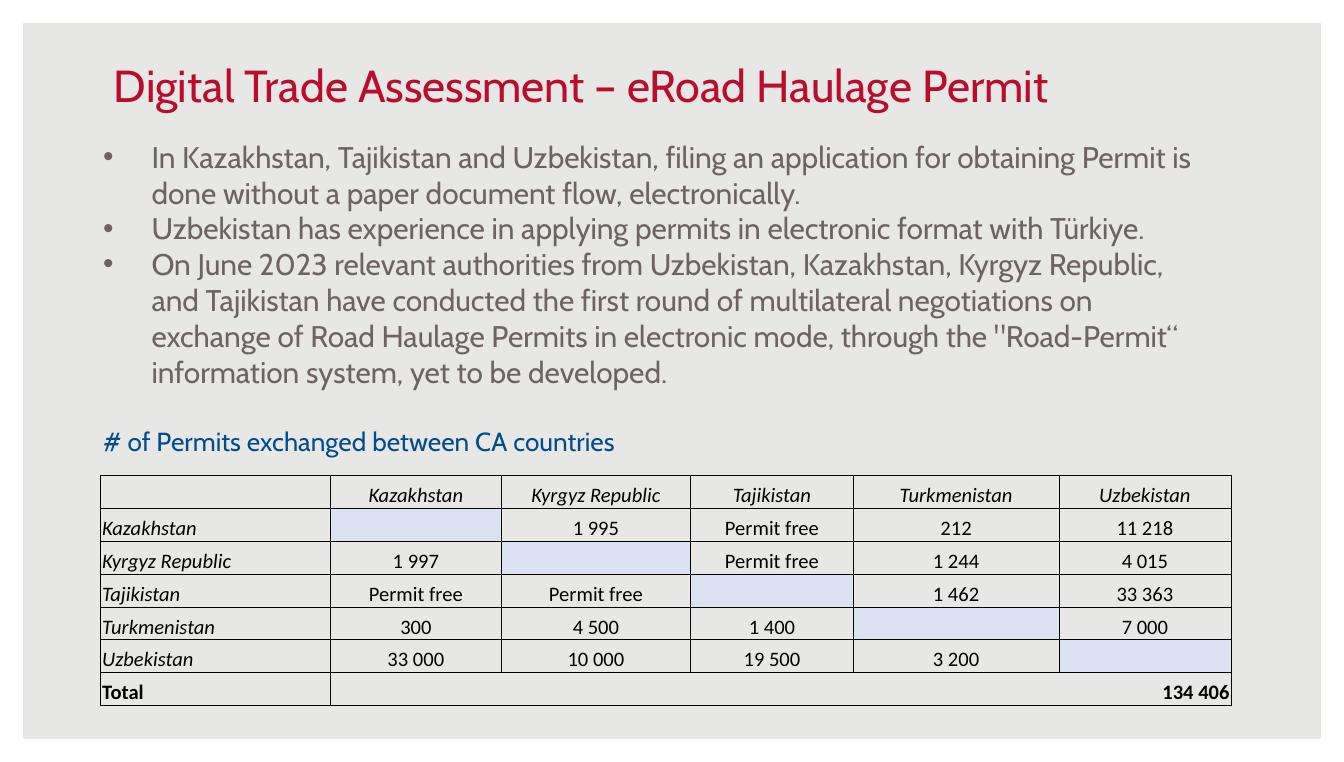
import pptx
import pptx.dml.color
import pptx.enum.shapes
import pptx.enum.text
import pptx.oxml
import pptx.oxml.ns
import pptx.util
from pptx.dml.color import RGBColor
from pptx.util import Inches

BACKGROUND = RGBColor(0xE7, 0xE7, 0xE5)
WHITE = RGBColor(0xFF, 0xFF, 0xFF)
BLACK = RGBColor(0x00, 0x00, 0x00)
RED = RGBColor(0xBA, 0x0C, 0x2F)
GREY = RGBColor(0x6C, 0x64, 0x63)
BLUE = RGBColor(0x00, 0x4D, 0x8B)
PALE_BLUE = RGBColor(0xD9, 0xE1, 0xF2)

TITLE = "Digital Trade Assessment – eRoad Haulage Permit"
BULLETS = [
    "In Kazakhstan, Tajikistan and Uzbekistan, filing an application for obtaining "
    "Permit is done without a paper document flow, electronically.",
    "Uzbekistan has experience in applying permits in electronic format with Türkiye.",
    "On June 2023 relevant authorities from Uzbekistan, Kazakhstan, Kyrgyz Republic, "
    "and Tajikistan have conducted the first round of multilateral negotiations on "
    "exchange of Road Haulage Permits in electronic mode, through the \"Road-Permit“ "
    "information system, yet to be developed.",
]
CAPTION = "# of Permits exchanged between CA countries"
COUNTRIES = ["Kazakhstan", "Kyrgyz Republic", "Tajikistan", "Turkmenistan", "Uzbekistan"]
PERMITS = [
    ["", "1 995", "Permit free", "212", "11 218"],
    ["1 997", "", "Permit free", "1 244", "4 015"],
    ["Permit free", "Permit free", "", "1 462", "33 363"],
    ["300", "4 500", "1 400", "", "7 000"],
    ["33 000", "10 000", "19 500", "3 200", ""],
]
TOTAL = "134 406"
COLUMN_WIDTHS = [1.71, 1.27, 1.41, 1.21, 1.53, 1.28]


def style_font(font, name, size, color):
    """Set the typeface, size and colour of a font."""
    font.name = name
    font.size = pptx.util.Pt(size)
    font.color.rgb = color


def add_frame(slide, left, top, width, height):
    """Draw the white border around the slide."""
    frame = slide.shapes.add_shape(
        pptx.enum.shapes.MSO_SHAPE.FRAME,
        Inches(left), Inches(top), Inches(width), Inches(height))
    frame.adjustments[0] = 0.03
    frame.shadow.inherit = False
    frame.fill.solid()
    frame.fill.fore_color.rgb = WHITE
    frame.line.fill.background()


def add_text_frame(slide, left, top, width, height):
    """Add a wrapping text box with equal insets and return its text frame."""
    box = slide.shapes.add_textbox(
        Inches(left), Inches(top), Inches(width), Inches(height))
    text_frame = box.text_frame
    text_frame.word_wrap = True
    text_frame.margin_left = text_frame.margin_right = Inches(0.1)
    text_frame.margin_top = text_frame.margin_bottom = Inches(0.1)
    return text_frame


def add_title(slide, left, top, width, height):
    """Write the slide title at the bottom of its box."""
    text_frame = add_text_frame(slide, left, top, width, height)
    text_frame.vertical_anchor = pptx.enum.text.MSO_ANCHOR.BOTTOM
    paragraph = text_frame.paragraphs[0]
    paragraph.text = TITLE
    style_font(paragraph.font, "Cabin", 24, RED)


def set_indent(paragraph, margin, indent):
    """Set the left margin and first-line indent of a paragraph."""
    properties = paragraph._p.get_or_add_pPr()
    properties.set("marL", str(Inches(margin)))
    properties.set("indent", str(Inches(indent)))
    return properties


def add_bullet(paragraph, color):
    """Give a paragraph a hanging round bullet."""
    properties = set_indent(paragraph, 0.5, -0.36)
    namespace = pptx.oxml.ns.nsdecls("a")
    for markup in (
            f'<a:buClr {namespace}><a:srgbClr val="{color}"/></a:buClr>',
            f'<a:buFont {namespace} typeface="Arial"/>',
            f'<a:buChar {namespace} char="•"/>'):
        properties.append(pptx.oxml.parse_xml(markup))


def add_body(slide, left, top, width, height):
    """Write the bullets and the table caption below them."""
    text_frame = add_text_frame(slide, left, top, width, height)
    for index, text in enumerate(BULLETS):
        paragraph = text_frame.add_paragraph() if index else text_frame.paragraphs[0]
        paragraph.text = text
        add_bullet(paragraph, GREY)
        style_font(paragraph.font, "Cabin", 16, GREY)
    caption = text_frame.add_paragraph()
    caption.text = CAPTION
    caption.space_before = pptx.util.Pt(19.5)
    set_indent(caption, 0.14, 0)
    style_font(caption.font, "Cabin", 14, BLUE)


def add_borders(cell):
    """Draw thin black lines on the four sides of a cell."""
    properties = cell._tc.get_or_add_tcPr()
    for index, side in enumerate(("lnL", "lnR", "lnT", "lnB")):
        properties.insert(index, pptx.oxml.parse_xml(
            f'<a:{side} {pptx.oxml.ns.nsdecls("a")} w="{pptx.util.Pt(0.5)}">'
            f'<a:solidFill><a:srgbClr val="{BLACK}"/></a:solidFill></a:{side}>'))


def fill_cell(cell, text, alignment, bold, italic, color):
    """Write one table cell and set its fill, insets and borders."""
    cell.margin_left = cell.margin_right = cell.margin_top = Inches(0.01)
    cell.margin_bottom = 0
    cell.vertical_anchor = pptx.enum.text.MSO_ANCHOR.BOTTOM
    paragraph = cell.text_frame.paragraphs[0]
    paragraph.text = text
    paragraph.alignment = alignment
    style_font(paragraph.font, "Calibri", 11, BLACK)
    paragraph.font.bold = bold
    paragraph.font.italic = italic
    if not text:
        paragraph._p.append(pptx.oxml.parse_xml(
            f'<a:endParaRPr {pptx.oxml.ns.nsdecls("a")} sz="1100"/>'))
    if color is None:
        cell.fill.background()
    else:
        cell.fill.solid()
        cell.fill.fore_color.rgb = color
    add_borders(cell)


def add_permit_table(slide, left, top, width, height):
    """Build the country-by-country table with its total row."""
    align = pptx.enum.text.PP_ALIGN
    rows = [["", *COUNTRIES]]
    rows += [[country, *values] for country, values in zip(COUNTRIES, PERMITS)]
    rows.append(["Total", TOTAL] + [""] * (len(COUNTRIES) - 1))
    last = len(rows) - 1
    table = slide.shapes.add_table(
        len(rows), len(COLUMN_WIDTHS),
        Inches(left), Inches(top), Inches(width), Inches(height)).table
    table.first_row = table.horz_banding = False
    for column, column_width in zip(table.columns, COLUMN_WIDTHS):
        column.width = Inches(column_width)
    for row_index, values in enumerate(rows):
        is_total = row_index == last
        for column_index, text in enumerate(values):
            is_label = column_index == 0
            is_diagonal = row_index == column_index > 0
            alignment = (align.LEFT if is_label
                         else align.RIGHT if is_total else align.CENTER)
            fill_cell(table.cell(row_index, column_index), text, alignment,
                      bold=is_total,
                      italic=not is_total and (is_label or row_index == 0),
                      color=PALE_BLUE if is_diagonal else None)
    table.cell(last, 1).merge(table.cell(last, len(COUNTRIES)))


def main():
    """Build the slide and save the presentation."""
    presentation = pptx.Presentation()
    presentation.slide_width = Inches(10)
    presentation.slide_height = Inches(5.67)
    slide = presentation.slides.add_slide(presentation.slide_layouts[6])
    slide.background.fill.solid()
    slide.background.fill.fore_color.rgb = BACKGROUND
    add_frame(slide, 0, 0, 10, 5.67)
    add_body(slide, 0.53, 0.93, 8.5, 2.56)
    add_title(slide, 0.75, 0.42, 8.5, 0.51)
    add_permit_table(slide, 0.75, 3.54, 8.41, 1.71)
    presentation.save("out.pptx")


if __name__ == "__main__":
    main()
